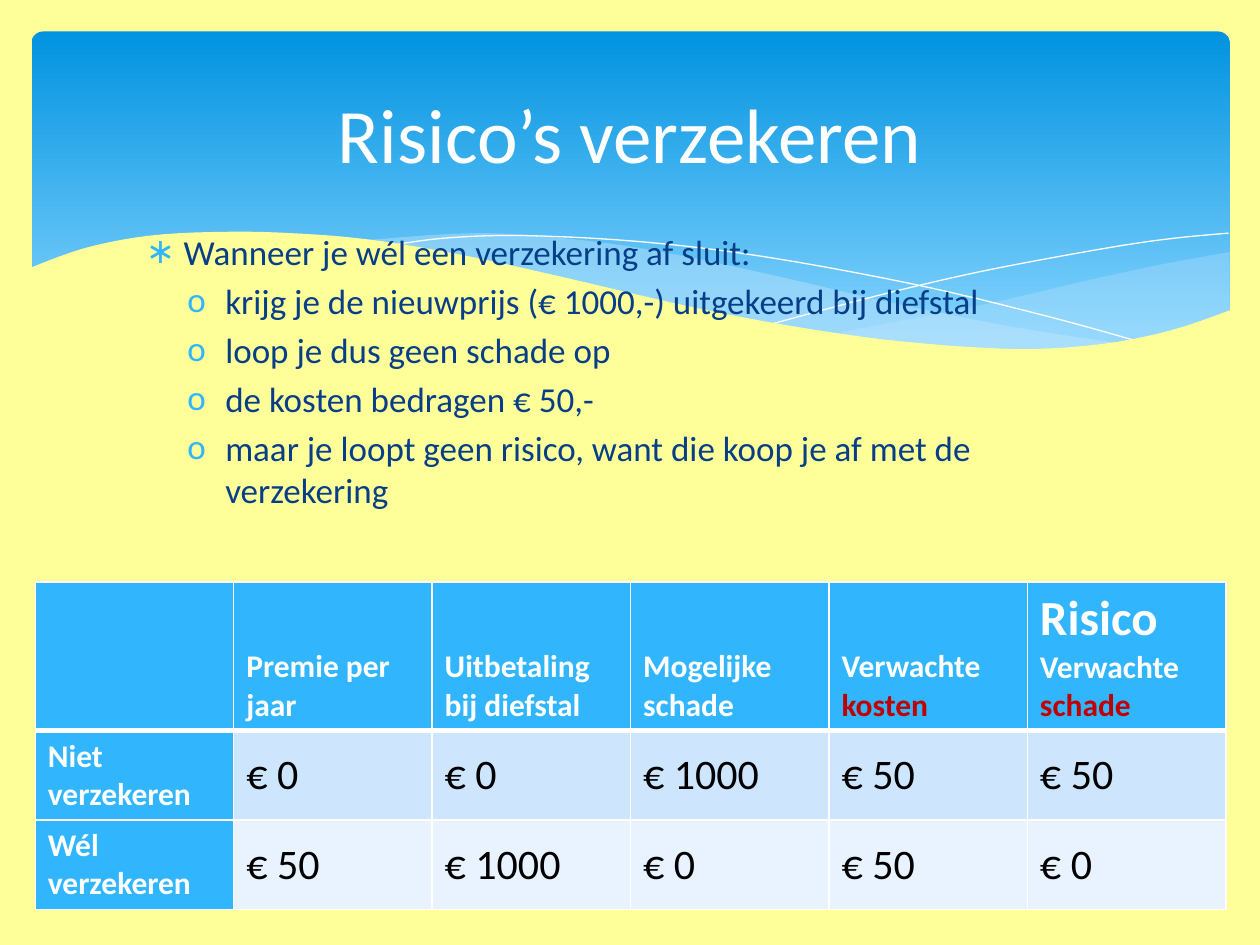
from lxml.etree import SubElement
from pptx import Presentation
from pptx.dml.color import RGBColor
from pptx.enum.shapes import MSO_SHAPE as SHAPE
from pptx.enum.text import MSO_ANCHOR as ANCHOR, PP_ALIGN as ALIGN
from pptx.oxml.ns import qn
from pptx.util import Inches, Pt

YELLOW = RGBColor(0xFF, 0xFF, 0x99)
WHITE = RGBColor(0xFF, 0xFF, 0xFF)
BLACK = RGBColor(0x00, 0x00, 0x00)
NAVY = RGBColor(0x07, 0x3E, 0x87)
RED = RGBColor(0xC0, 0x00, 0x00)
SKY = RGBColor(0x31, 0xB6, 0xFD)
BANNER_TOP = RGBColor(0x02, 0x93, 0xE0)
BANNER_BOTTOM = RGBColor(0x83, 0xD3, 0xFE)
MIST = RGBColor(0xC6, 0xE7, 0xFC)
BAND_DARK = RGBColor(0xCE, 0xE5, 0xFE)
BAND_LIGHT = RGBColor(0xE8, 0xF3, 0xFF)
FONT = "Calibri"

TITLE = "Risico’s verzekeren"
INTRO = "Wanneer je wél een verzekering af sluit:"
POINTS = [
    "krijg je de nieuwprijs (€ 1000,-) uitgekeerd bij diefstal",
    "loop je dus geen schade op",
    "de kosten bedragen € 50,-",
    "maar je loopt geen risico, want die koop je af met de verzekering",
]
# Each heading is a list of paragraphs, each paragraph a list of (text, size, colour)
HEADINGS = [
    [],
    [[("Premie per jaar", 18, WHITE)]],
    [[("Uitbetaling bij diefstal", 18, WHITE)]],
    [[("Mogelijke schade", 18, WHITE)]],
    [[("Verwachte ", 18, WHITE), ("kosten", 18, RED)]],
    [[("Risico", 28, WHITE)], [("Verwachte ", 18, WHITE), ("schade", 18, RED)]],
]
CHOICES = [
    ("Niet verzekeren", BAND_DARK, ["€ 0", "€ 0", "€ 1000", "€ 50", "€ 50"]),
    ("Wél verzekeren", BAND_LIGHT, ["€ 50", "€ 1000", "€ 0", "€ 50", "€ 0"]),
]
ROW_HEIGHTS = [1.18, 0.71, 0.71]

# Waves: each edge is a smooth curve through its points, in inches
RIGHT_WAVE = [
    [(9.76, 2), (9.21, 2.1), (8.61, 2.23), (7.79, 2.42), (6.61, 2.65)],
    [(6.61, 2.65), (7.32, 2.74), (8.14, 2.78), (8.81, 2.73), (9.35, 2.62), (9.76, 2.47)],
]
LONG_WAVE = [
    [(8.93, 2.73), (8.07, 2.6), (7.06, 2.4), (6.29, 2.22), (5.41, 2.03),
     (4.65, 1.91), (3.8, 1.85), (2.86, 1.91)],
    [(2.86, 1.91), (3.62, 2.03), (4.49, 2.22), (5.66, 2.48), (6.5, 2.64),
     (7.22, 2.74), (8.07, 2.78), (8.93, 2.73)],
]
FALLING_LINE = [[(3.09, 1.95), (3.53, 1.89), (4.16, 1.87), (5.1, 1.92), (6.08, 2.04),
                 (7.27, 2.26), (8.31, 2.51), (9.07, 2.72)]]
RISING_LINE = [[(6.13, 2.57), (6.95, 2.35), (7.76, 2.16), (8.66, 1.99), (9.24, 1.9), (9.75, 1.85)]]
FOREGROUND = [
    [(9.77, 2.46), (9.3, 2.62), (8.75, 2.73), (8.09, 2.77), (7.26, 2.72), (6.48, 2.62),
     (5.55, 2.45), (4.47, 2.2), (3.65, 2.02), (2.92, 1.9), (2.3, 1.85), (1.77, 1.84),
     (1.19, 1.87), (0.67, 1.97), (0.23, 2.13)],
    [(0.23, 3.29), (9.77, 3.29)],
]


def smooth(points, steps=5):
    """Points along a Catmull-Rom curve through the given ones."""
    padded = [points[0], *points, points[-1]]
    curve = [points[0]]
    for a, b, c, d in zip(padded, padded[1:], padded[2:], padded[3:]):
        for step in range(1, steps + 1):
            t = step / steps
            curve.append(tuple(
                (2 * q + (r - p) * t + (2 * p - 5 * q + 4 * r - s) * t ** 2
                 + (3 * q - p - 3 * r + s) * t ** 3) / 2
                for p, q, r, s in zip(a, b, c, d)))
    return curve


def add_wave(edges, fill=None, opacity=None):
    """A filled wave, or a white hairline when no fill is given."""
    outline = [(Inches(x), Inches(y)) for edge in edges for x, y in smooth(edge)]
    builder = slide.shapes.build_freeform(*outline[0])
    builder.add_line_segments(outline[1:], close=fill is not None)
    wave = builder.convert_to_shape()
    wave.shadow.inherit = False
    if fill is None:
        wave.fill.background()
        wave.line.color.rgb = WHITE
        wave.line.width = Pt(0)
        return
    wave.line.fill.background()
    wave.fill.solid()
    wave.fill.fore_color.rgb = fill
    if opacity:
        color = wave.fill._xPr.find(qn("a:solidFill"))[0]
        SubElement(color, qn("a:alpha"), val=str(opacity * 1000))


def add_run(paragraph, text, size, color, bold=False):
    run = paragraph.add_run()
    run.text = text
    run.font.name, run.font.size, run.font.bold = FONT, Pt(size), bold
    run.font.color.rgb = color


def add_textbox(left, top, width, height):
    frame = slide.shapes.add_textbox(*map(Inches, (left, top, width, height))).text_frame
    frame.word_wrap = True
    return frame


def set_bullet(paragraph, char, indent):
    props = paragraph._p.get_or_add_pPr()
    props.set("marL", str(Inches(indent)))
    props.set("indent", str(Inches(-0.3)))
    color = SubElement(props, qn("a:buClr"))
    SubElement(color, qn("a:srgbClr"), val=str(SKY))
    SubElement(props, qn("a:buFont"), typeface=FONT)
    SubElement(props, qn("a:buChar"), char=char)


def fill_cell(cell, fill, paragraphs, anchor, bold, bottom_width=1):
    frame = cell.text_frame
    for i, runs in enumerate(paragraphs):
        paragraph = frame.add_paragraph() if i else frame.paragraphs[0]
        for text, size, color in runs:
            add_run(paragraph, text, size, color, bold)
    cell.vertical_anchor = anchor
    props = cell._tc.get_or_add_tcPr()
    for side, width in (("L", 1), ("R", 1), ("T", 1), ("B", bottom_width)):
        border = SubElement(props, qn(f"a:ln{side}"), w=str(Pt(width)))
        SubElement(SubElement(border, qn("a:solidFill")), qn("a:srgbClr"), val=str(WHITE))
    cell.fill.solid()
    cell.fill.fore_color.rgb = fill


prs = Presentation()
prs.slide_width, prs.slide_height = Inches(10), Inches(7.5)
slide = prs.slides.add_slide(prs.slide_layouts[6])
slide.background.fill.solid()
slide.background.fill.fore_color.rgb = YELLOW

banner = slide.shapes.add_shape(
    SHAPE.ROUNDED_RECTANGLE, Inches(0.25), Inches(0.25), Inches(9.51), Inches(2.7))
banner.adjustments[0] = 0.034
banner.shadow.inherit = False
banner.line.fill.background()
banner.fill.gradient()
banner.fill.gradient_angle = 270
for stop, color, position in zip(
        banner.fill.gradient_stops, (BANNER_TOP, BANNER_BOTTOM), (0, 0.9)):
    stop.color.rgb = color
    stop.position = position

add_wave(RIGHT_WAVE, MIST, 29)
add_wave(LONG_WAVE, MIST, 40)
add_wave(FALLING_LINE)
add_wave(RISING_LINE)
add_wave(FOREGROUND, YELLOW)

body = add_textbox(1.06, 1.78, 8.1, 2.6)
lines = [(INTRO, "∗", 0.3)] + [(point, "o", 0.63) for point in POINTS]
for i, (text, bullet, indent) in enumerate(lines):
    line = body.add_paragraph() if i else body.paragraphs[0]
    line.space_before = Pt(4)
    set_bullet(line, bullet, indent)
    add_run(line, text, 20, NAVY)

title = add_textbox(0.5, 0.37, 9, 1.37)
title.vertical_anchor = ANCHOR.MIDDLE
title.paragraphs[0].alignment = ALIGN.CENTER
add_run(title.paragraphs[0], TITLE, 44, WHITE)

table = slide.shapes.add_table(
    len(ROW_HEIGHTS), len(HEADINGS), Inches(0.28), Inches(4.62),
    Inches(9.45), Inches(sum(ROW_HEIGHTS))).table
for row, height in zip(table.rows, ROW_HEIGHTS):
    row.height = Inches(height)
for col, heading in enumerate(HEADINGS):
    fill_cell(table.cell(0, col), SKY, heading, ANCHOR.BOTTOM, True, bottom_width=3)
for row, (choice, band, amounts) in enumerate(CHOICES, start=1):
    fill_cell(table.cell(row, 0), SKY, [[(choice, 18, WHITE)]], ANCHOR.TOP, True)
    for col, amount in enumerate(amounts, start=1):
        fill_cell(table.cell(row, col), band, [[(amount, 24, BLACK)]], ANCHOR.MIDDLE, False)

prs.save("out.pptx")
